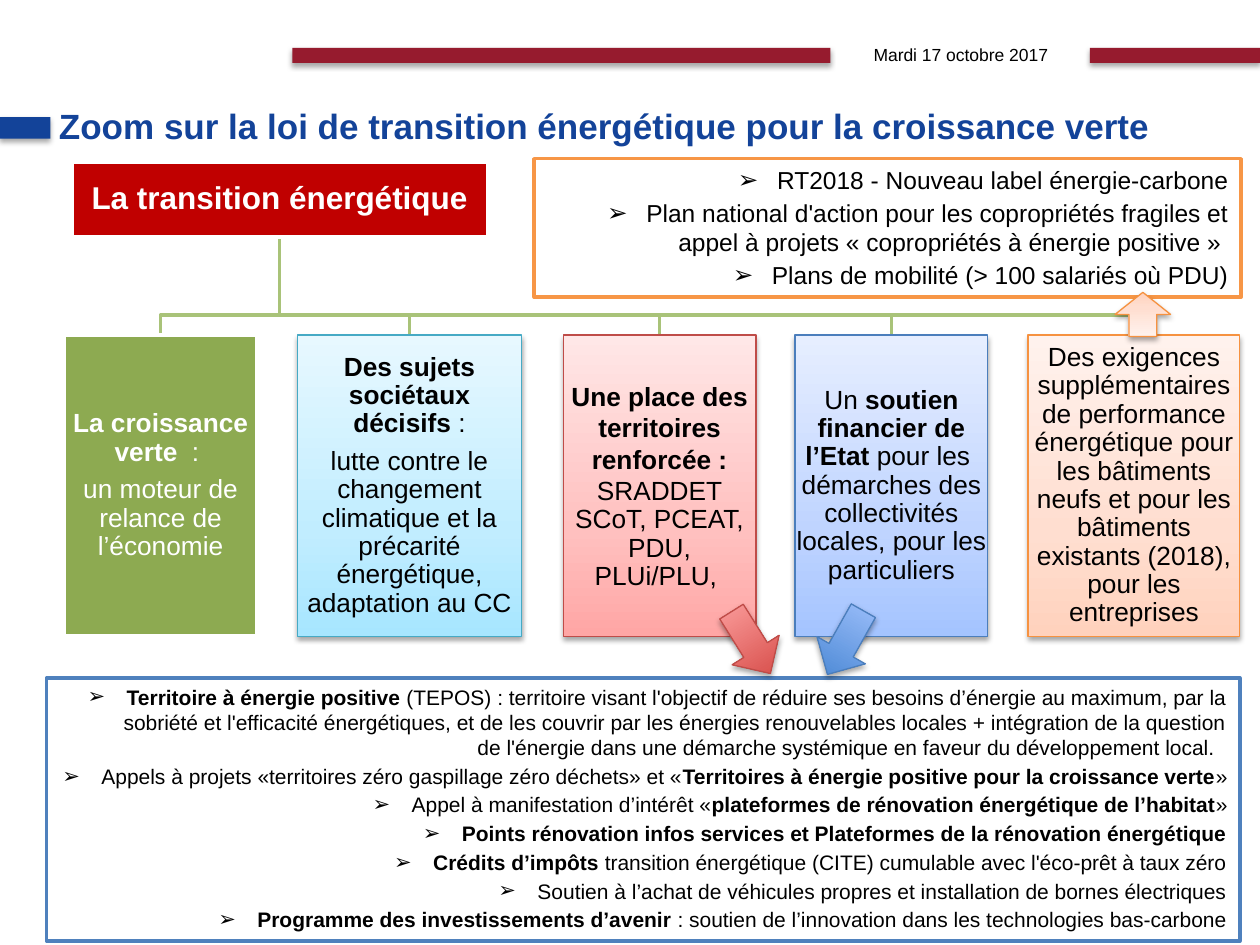
import dataclasses

import lxml.etree
import pptx
import pptx.dml.color
import pptx.enum.shapes
import pptx.enum.text
import pptx.oxml
import pptx.oxml.ns
import pptx.util

Inches = pptx.util.Inches
Pt = pptx.util.Pt
Shapes = pptx.enum.shapes.MSO_SHAPE
Align = pptx.enum.text.PP_ALIGN
Anchor = pptx.enum.text.MSO_ANCHOR
qn = pptx.oxml.ns.qn


@dataclasses.dataclass(frozen=True)
class Theme:
    font: str = "Arial"
    black: str = "000000"
    white: str = "FFFFFF"
    navy: str = "134399"
    maroon: str = "961B2E"
    red: str = "C00000"
    green: str = "8DAA51"
    branch: str = "A9C379"
    orange_frame: str = "F79646"
    blue_frame: str = "4F81BD"
    aqua_line: str = "46AAC5"
    red_line: str = "BF4C48"
    blue_line: str = "4B7EBC"
    orange_line: str = "F69240"
    aqua_tint: tuple = ((0, "A7E6FF"), (35, "C1EDFF"), (100, "E7F8FF"))
    red_tint: tuple = ((0, "FFA6A5"), (35, "FFC0BF"), (100, "FFE7E7"))
    blue_tint: tuple = ((0, "A4C4FF"), (35, "BFD4FF"), (100, "E6EEFF"))
    orange_tint: tuple = ((0, "FFD2BD"), (35, "FFDED0"), (100, "FFF2ED"))
    red_strong: tuple = ((0, "D1403C"), (100, "FFA6A5"))
    blue_strong: tuple = ((0, "3F80CE"), (100, "A4C4FF"))
    date_size: int = 10
    detail_size: int = 12
    news_size: int = 14
    card_size: int = 15
    root_size: int = 18
    title_size: int = 20


THEME = Theme()
CARD_TOP, CARD_HEIGHT = 2.66, 2.39
ROOT = (0.57, 1.29, 3.3, 0.59)

# left, width, fill, line colour, line width, text colour, paragraphs
CARDS = [
    (0.51, 1.53, THEME.green, THEME.white, 2, THEME.white,
     ["**La croissance verte  **: ", "un moteur de relance de l’économie"]),
    (2.36, 1.78, THEME.aqua_tint, THEME.aqua_line, 0.75, THEME.black,
     ["**Des sujets sociétaux décisifs **:",
      "lutte contre le changement climatique et la précarité énergétique, adaptation au CC"]),
    (4.47, 1.53, THEME.red_tint, THEME.red_line, 0.75, THEME.black,
     ["**Une place des territoires renforcée : **SRADDET", "SCoT, PCEAT, PDU, PLUi/PLU, "]),
    (6.31, 1.53, THEME.blue_tint, THEME.blue_line, 0.75, THEME.black,
     ["Un **soutien financier de l’Etat **pour les  démarches des collectivités locales, "
      "pour les particuliers"]),
    (8.16, 1.68, THEME.orange_tint, THEME.orange_line, 0.75, THEME.black,
     ["Des exigences supplémentaires de performance énergétique pour les bâtiments neufs "
      "et pour les bâtiments existants (2018), pour les entreprises"]),
]
NEWS = [
    "RT2018 - Nouveau label énergie-carbone",
    "Plan national d'action pour les copropriétés fragiles et appel à projets "
    "« copropriétés à énergie positive » ",
    "Plans de mobilité (> 100 salariés où PDU)",
]
DETAILS = [
    "**Territoire à énergie positive **(TEPOS) : territoire visant l'objectif de réduire ses "
    "besoins d’énergie au maximum, par la sobriété et l'efficacité énergétiques, et de les "
    "couvrir par les énergies renouvelables locales + intégration de la question de l'énergie "
    "dans une démarche systémique en faveur du développement local.  ",
    "Appels à projets «territoires zéro gaspillage zéro déchets» et "
    "«**Territoires à énergie positive pour la croissance verte**»",
    "Appel à manifestation d’intérêt «**plateformes de rénovation énergétique de l’habitat**»",
    "**Points rénovation infos services et Plateformes de la rénovation énergétique**",
    "**Crédits d’impôts **transition énergétique (CITE) cumulable avec l'éco-prêt à taux zéro",
    "Soutien à l’achat de véhicules propres et installation de bornes électriques",
    "**Programme des investissements d’avenir **: soutien de l’innovation dans les "
    "technologies bas-carbone",
]


def rgb(value):
    return pptx.dml.color.RGBColor.from_string(value)


def add_bullet(para):
    properties = para._p.get_or_add_pPr()
    properties.set("marL", str(Inches(0.31)))
    properties.set("indent", str(-Inches(0.31)))
    lxml.etree.SubElement(properties, qn("a:buFont"), typeface=THEME.font)
    lxml.etree.SubElement(properties, qn("a:buChar"), char="➢")


def write_text(box, lines, *, size, color=THEME.black, align=Align.CENTER,
               anchor=Anchor.MIDDLE, inset=None, spacing=None, before=0, after=0, bullet=False):
    """Fill a box with paragraphs; ** switches bold on and off."""
    frame = box.text_frame
    frame.word_wrap = True
    frame.vertical_anchor = anchor
    if inset is not None:
        frame.margin_left = frame.margin_right = Inches(inset)
        frame.margin_top = frame.margin_bottom = Inches(inset)
    for number, line in enumerate(lines):
        para = frame.add_paragraph() if number else frame.paragraphs[0]
        if bullet:
            add_bullet(para)
        para.alignment = align
        para.line_spacing = spacing
        para.space_before = Pt(before if number else 0)
        para.space_after = Pt(after)
        for part, words in enumerate(line.split("**")):
            if words:
                span = para.add_run()
                span.text = words
                span.font.name = THEME.font
                span.font.size = Pt(size)
                span.font.bold = part % 2 == 1
                span.font.color.rgb = rgb(color)


def set_gradient(shape, stops):
    shape.fill.gradient()
    shape.fill.gradient_angle = 90
    stop_list = shape._element.spPr.find(".//" + qn("a:gsLst"))
    stop_list.clear()
    for position, color in stops:
        stop = lxml.etree.SubElement(stop_list, qn("a:gs"), pos=str(position * 1000))
        lxml.etree.SubElement(stop, qn("a:srgbClr"), val=color)


def set_shadow(shape, opacity=35, distance=1.8):
    effects = shape._element.spPr.find(qn("a:effectLst"))
    outer = lxml.etree.SubElement(effects, qn("a:outerShdw"), blurRad=str(Pt(3.1)),
                                  dist=str(Pt(distance)), dir="5400000", rotWithShape="0")
    color = lxml.etree.SubElement(outer, qn("a:srgbClr"), val=THEME.black)
    lxml.etree.SubElement(color, qn("a:alpha"), val=str(opacity * 1000))


def add_block(page, place, fill, line=None, width=0.75, kind=Shapes.RECTANGLE, turn=0, shadow=False):
    shape = page.shapes.add_shape(kind, *map(Inches, place))
    shape.rotation = turn
    shape.shadow.inherit = False
    if isinstance(fill, tuple):
        set_gradient(shape, fill)
    else:
        shape.fill.solid()
        shape.fill.fore_color.rgb = rgb(fill)
    if line:
        shape.line.color.rgb = rgb(line)
        shape.line.width = Pt(width)
    else:
        shape.line.fill.background()
    if shadow:
        set_shadow(shape)
    return shape


def add_label(page, place, text, **style):
    box = page.shapes.add_textbox(*map(Inches, place))
    write_text(box, [text], **style)


def add_branch(page, end_x):
    """Draw an elbow from the root block down to a card."""
    left, top, width, height = ROOT
    start_x, start_y = left + width / 2, top + height
    builder = page.shapes.build_freeform(Inches(start_x), Inches(start_y))
    corners = [(start_x, 2.5), (end_x, 2.5), (end_x, CARD_TOP)]
    builder.add_line_segments([(Inches(x), Inches(y)) for x, y in corners], close=False)
    branch = builder.convert_to_shape()
    branch.shadow.inherit = False
    branch.fill.background()
    branch.line.color.rgb = rgb(THEME.branch)
    branch.line.width = Pt(2)


def add_card(page, left, width, fill, line, line_width, color, lines):
    tinted = isinstance(fill, tuple)
    card = add_block(page, (left, CARD_TOP, width, CARD_HEIGHT), fill, line, line_width, shadow=tinted)
    write_text(card, lines, size=THEME.card_size, color=color, inset=0.01, spacing=0.9, after=5.25)
    if fill == THEME.red_tint:
        lead = card.text_frame.paragraphs[0]
        lead.line_spacing, lead.space_after = 1.0, Pt(0)


def add_list(page, place, line, lines, size):
    box = add_block(page, place, THEME.white, line, 2)
    write_text(box, lines, size=size, align=Align.RIGHT, anchor=Anchor.TOP, before=2, bullet=True)


def add_arrow(page, place, fill, line, turn):
    add_block(page, place, fill, line, kind=Shapes.DOWN_ARROW, turn=turn, shadow=True)


def main():
    deck = pptx.Presentation()
    deck.slide_width, deck.slide_height = Inches(10), Inches(7.5)
    page = deck.slides.add_slide(deck.slide_layouts[6])

    add_label(page, (6.54, 0.23, 2.17, 0.4), "Mardi 17 octobre 2017", size=THEME.date_size)
    for place, color in [((2.32, 0.38, 4.27, 0.12), THEME.maroon),
                         ((8.65, 0.38, 1.35, 0.12), THEME.maroon),
                         ((0, 0.93, 0.4, 0.17), THEME.navy)]:
        add_block(page, place, color, shadow=True)

    for left, width, *_ in reversed(CARDS):
        add_branch(page, left + width / 2)
    root = add_block(page, ROOT, THEME.red, THEME.white, 2)
    write_text(root, ["**La transition énergétique**"], size=THEME.root_size,
               color=THEME.white, inset=0.01, spacing=0.9, after=6.3)
    for card in CARDS:
        add_card(page, *card)

    add_list(page, (0.37, 5.38, 9.47, 2.09), THEME.blue_frame, DETAILS, THEME.detail_size)
    add_list(page, (4.24, 1.26, 5.61, 1.1), THEME.orange_frame, NEWS, THEME.news_size)
    add_arrow(page, (6.49, 4.81, 0.44, 0.58), THEME.blue_strong, THEME.blue_line, 29.4)
    add_arrow(page, (8.85, 2.32, 0.44, 0.35), THEME.orange_tint, THEME.orange_line, 180)
    add_arrow(page, (5.74, 4.81, 0.44, 0.58), THEME.red_strong, THEME.red_line, 327.9)
    add_label(page, (0.37, 0.61, 9.1, 0.77),
              "**Zoom sur la loi de transition énergétique pour la croissance verte**",
              size=THEME.title_size, color=THEME.navy, align=Align.LEFT)

    deck.save("out.pptx")


if __name__ == "__main__":
    main()
